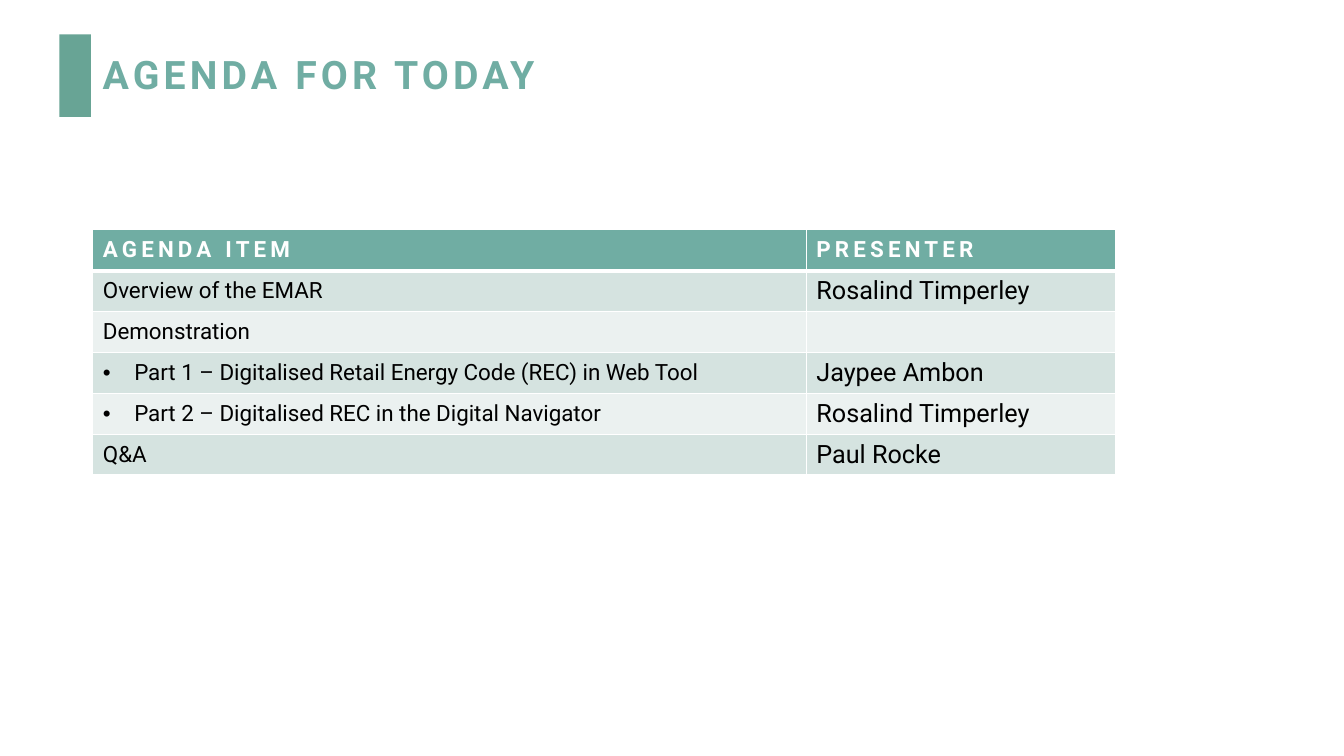
from lxml import etree
from pptx import Presentation
from pptx.dml.color import RGBColor
from pptx.enum.shapes import MSO_SHAPE
from pptx.enum.text import MSO_ANCHOR
from pptx.oxml.ns import qn
from pptx.util import Cm, Pt

RECT = MSO_SHAPE.RECTANGLE
MIDDLE = MSO_ANCHOR.MIDDLE
FONT = "Roboto"
COLORS = {
    "accent": "68A495",
    "teal": "70ADA3",
    "dark": "D5E3E0",
    "light": "EBF1F0",
    "white": "FFFFFF",
    "black": "000000",
}
LEFT, WIDTH = 2.34, 25.78
ROW = 1.03
COLS = (17.98, 7.8)
HEAD = ("AGENDA ITEM", "PRESENTER")
ITEMS = (
    ("Overview of the EMAR", "Rosalind Timperley", False),
    ("Demonstration", "", False),
    ("Part 1 – Digitalised Retail Energy Code (REC) in Web Tool", "Jaypee Ambon", True),
    ("Part 2 – Digitalised REC in the Digital Navigator", "Rosalind Timperley", True),
    ("Q&A", "Paul Rocke", False),
)


def color(name):
    return RGBColor.from_string(COLORS[name])


def write(frame, text, size=16, ink="black", bold=False, gap=0, bullet=False, line=None):
    para = frame.paragraphs[0]
    if bullet:
        props = para._p.get_or_add_pPr()
        props.set("marL", str(Cm(0.79)))
        props.set("indent", str(Cm(-0.79)))
        etree.SubElement(props, qn("a:buFont"), typeface="Arial")
        etree.SubElement(props, qn("a:buChar"), char="•")
    if line:
        para.line_spacing = line
    para.font.size = Pt(size)
    if not text:
        return
    run = para.add_run()
    run.text = text
    font = run.font
    font.name, font.size, font.bold = FONT, Pt(size), bold
    font.color.rgb = color(ink)
    if gap:
        run._r.get_or_add_rPr().set("spc", str(gap * 100))


def add_bar(slide):
    bar = slide.shapes.add_shape(RECT, Cm(1.5), Cm(0.87), Cm(0.79), Cm(2.08))
    bar.shadow.inherit = False
    bar.fill.solid()
    bar.fill.fore_color.rgb = color("accent")
    bar.line.fill.background()


def add_title(slide, text):
    box = slide.shapes.add_textbox(Cm(LEFT), Cm(1.01), Cm(WIDTH), Cm(1.83))
    frame = box.text_frame
    frame.word_wrap = True
    frame.vertical_anchor = MIDDLE
    write(frame, text, size=28, ink="teal", bold=True, gap=3, line=0.9)


def add_edges(cell, top, bottom):
    props = cell._tc.get_or_add_tcPr()
    for side, width in (("L", 1), ("R", 1), ("T", top), ("B", bottom)):
        edge = etree.SubElement(props, qn(f"a:ln{side}"), w=str(Pt(width)))
        fill = etree.SubElement(edge, qn("a:solidFill"))
        etree.SubElement(fill, qn("a:srgbClr"), val=COLORS["white"])


def fill_cell(cell, text, shade, top=1, bottom=1, **style):
    add_edges(cell, top, bottom)
    cell.fill.solid()
    cell.fill.fore_color.rgb = color(shade)
    cell.vertical_anchor = MIDDLE
    write(cell.text_frame, text, **style)


def add_agenda(slide):
    count = len(ITEMS) + 1
    table = slide.shapes.add_table(
        count, len(COLS), Cm(LEFT), Cm(5.79), Cm(WIDTH), Cm(ROW * count)
    ).table
    for col, width in zip(table.columns, COLS):
        col.width = Cm(width)
    for row in table.rows:
        row.height = Cm(ROW)
    for col, text in enumerate(HEAD):
        fill_cell(table.cell(0, col), text, "teal", bottom=3, ink="white", bold=True, gap=3)
    for row, (item, name, bullet) in enumerate(ITEMS, 1):
        shade = "dark" if row % 2 else "light"
        top = 3 if row == 1 else 1
        fill_cell(table.cell(row, 0), item, shade, top=top, bullet=bullet)
        fill_cell(table.cell(row, 1), name, shade, top=top, size=18)


def main():
    deck = Presentation()
    deck.slide_width, deck.slide_height = Cm(33.87), Cm(19.05)
    slide = deck.slides.add_slide(deck.slide_layouts[6])
    add_bar(slide)
    add_title(slide, "AGENDA FOR TODAY")
    add_agenda(slide)
    deck.save("out.pptx")


if __name__ == "__main__":
    main()
